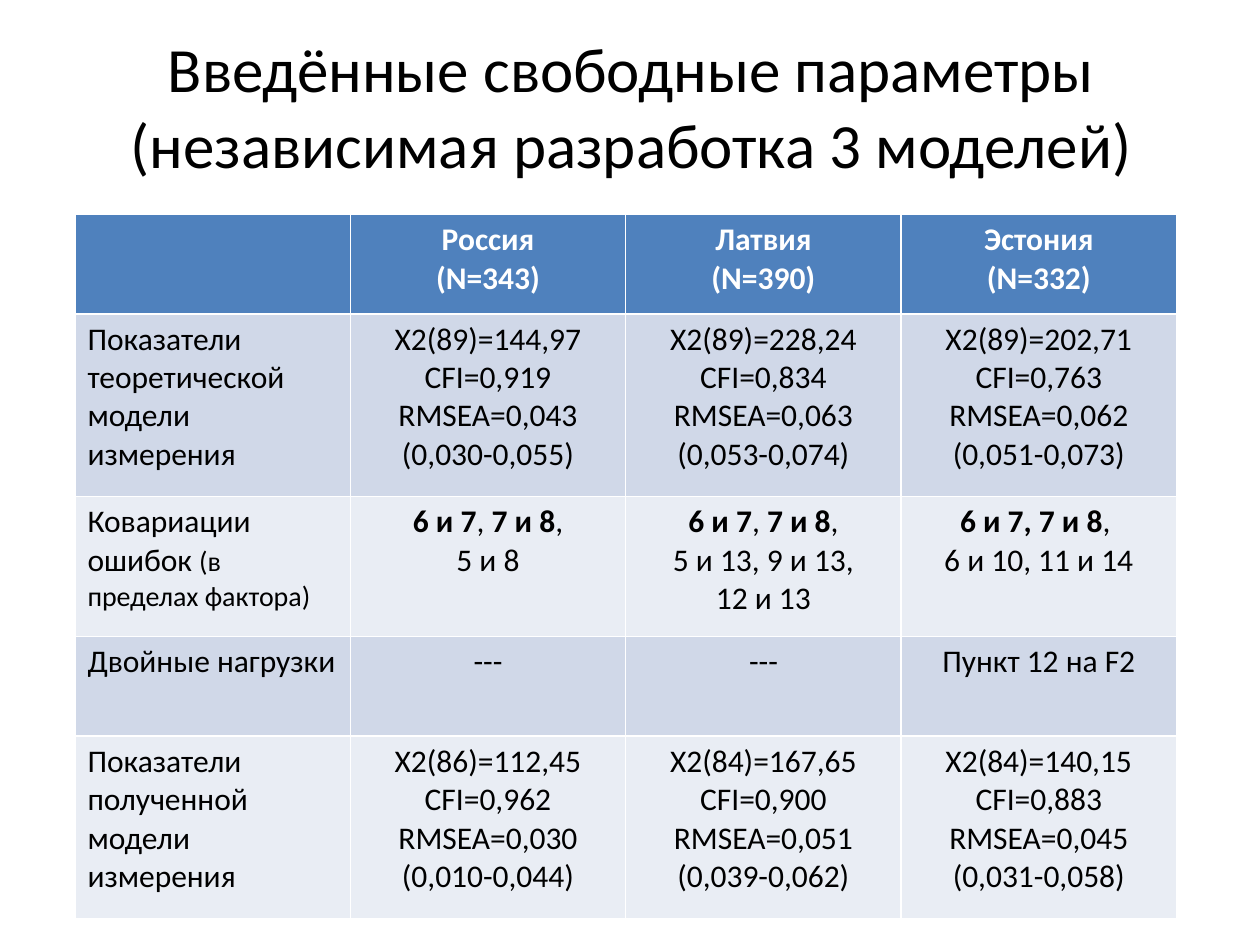
from copy import deepcopy

from pptx import Presentation
from pptx.dml.color import RGBColor
from pptx.enum.text import MSO_ANCHOR, MSO_AUTO_SIZE, PP_ALIGN
from pptx.util import Pt

CENTER, LEFT = PP_ALIGN.CENTER, PP_ALIGN.LEFT
MIDDLE = MSO_ANCHOR.MIDDLE
NO_AUTOFIT = MSO_AUTO_SIZE.NONE

FONT = "Calibri"
BLACK = RGBColor(0x00, 0x00, 0x00)
WHITE = RGBColor(0xFF, 0xFF, 0xFF)
HEADER_BLUE = RGBColor(0x4F, 0x81, 0xBD)
BANDS = (RGBColor(0xD0, 0xD8, 0xE8), RGBColor(0xE9, 0xED, 0xF4))

TITLE = "Введённые свободные параметры\n(независимая разработка 3 моделей)"
HEADERS = ["", "Россия\n(N=343)", "Латвия\n(N=390)", "Эстония\n(N=332)"]

# A cell is a string, or a list of (text, format) parts
BOLD = {"bold": True}
SMALL = {"size": 16}
ROWS = [
    ["Показатели теоретической модели измерения",
     "X2(89)=144,97\nCFI=0,919\nRMSEA=0,043\n(0,030-0,055)",
     "X2(89)=228,24\nCFI=0,834\nRMSEA=0,063\n(0,053-0,074)",
     "X2(89)=202,71\nCFI=0,763\nRMSEA=0,062\n(0,051-0,073)"],
    [[("Ковариации ошибок ", {}), ("(в пределах фактора)", SMALL)],
     [("6 и 7", BOLD), (", ", {}), ("7 и 8", BOLD), (",\n5 и 8", {})],
     [("6 и 7", BOLD), (", ", {}), ("7 и 8", BOLD),
      (",\n5 и 13, 9 и 13,\n12 и 13", {})],
     [("6 и 7, 7 и 8", BOLD), (", \n6 и 10, 11 и 14", {})]],
    ["Двойные нагрузки", "---", "---", "Пункт 12 на F2"],
    ["Показатели полученной модели измерения",
     "X2(86)=112,45\nCFI=0,962\nRMSEA=0,030\n(0,010-0,044)",
     "X2(84)=167,65\nCFI=0,900\nRMSEA=0,051\n(0,039-0,062)",
     "X2(84)=140,15\nCFI=0,883\nRMSEA=0,045\n(0,031-0,058)"],
]

TABLE_LEFT, TABLE_TOP = 42.8, 122.5
COLUMN_WIDTH = 157.4
ROW_HEIGHTS = [56.8, 104.4, 79.9, 57, 104.4]


def add_text(paragraph, text, size=18, color=BLACK, bold=False, align=LEFT):
    """Append text to the paragraph, with a line break at each newline."""
    paragraph.alignment = align
    for index, line in enumerate(text.split("\n")):
        if index:
            paragraph.add_line_break()
            line_break = paragraph._p[-1]
            line_break.append(deepcopy(run._r.rPr))
        run = paragraph.add_run()
        run.text = line
        run.font.name = FONT
        run.font.size = Pt(size)
        run.font.bold = bold
        run.font.color.rgb = color


def add_title(slide):
    title = slide.shapes.title
    title.left, title.top = Pt(36.7), Pt(15.1)
    title.width, title.height = Pt(648), Pt(90)
    frame = title.text_frame
    frame.word_wrap = True
    frame.auto_size = NO_AUTOFIT
    frame.vertical_anchor = MIDDLE
    add_text(frame.paragraphs[0], TITLE, size=36, align=CENTER)


def fill_cell(cell, content, fill, **text_format):
    cell.fill.solid()
    cell.fill.fore_color.rgb = fill
    parts = [(content, {})] if isinstance(content, str) else content
    for text, part_format in parts:
        if text:
            add_text(cell.text_frame.paragraphs[0], text,
                     **{**text_format, **part_format})


def add_parameter_table(slide):
    table = slide.shapes.add_table(
        len(ROW_HEIGHTS), len(HEADERS), Pt(TABLE_LEFT), Pt(TABLE_TOP),
        Pt(COLUMN_WIDTH * len(HEADERS)), Pt(sum(ROW_HEIGHTS))).table
    for column in table.columns:
        column.width = Pt(COLUMN_WIDTH)
    for row, height in zip(table.rows, ROW_HEIGHTS):
        row.height = Pt(height)

    # Country headers
    for column, header in enumerate(HEADERS):
        fill_cell(table.cell(0, column), header, HEADER_BLUE,
                  color=WHITE, bold=True, align=CENTER)

    # Banded body: row labels on the left, values centred
    for row, contents in enumerate(ROWS, start=1):
        for column, content in enumerate(contents):
            fill_cell(table.cell(row, column), content, BANDS[(row - 1) % 2],
                      align=CENTER if column else LEFT)


def main():
    presentation = Presentation()
    presentation.slide_width, presentation.slide_height = Pt(720), Pt(540)
    title_only = presentation.slide_layouts[5]
    slide = presentation.slides.add_slide(title_only)
    add_title(slide)
    add_parameter_table(slide)
    presentation.save("out.pptx")


if __name__ == "__main__":
    main()
